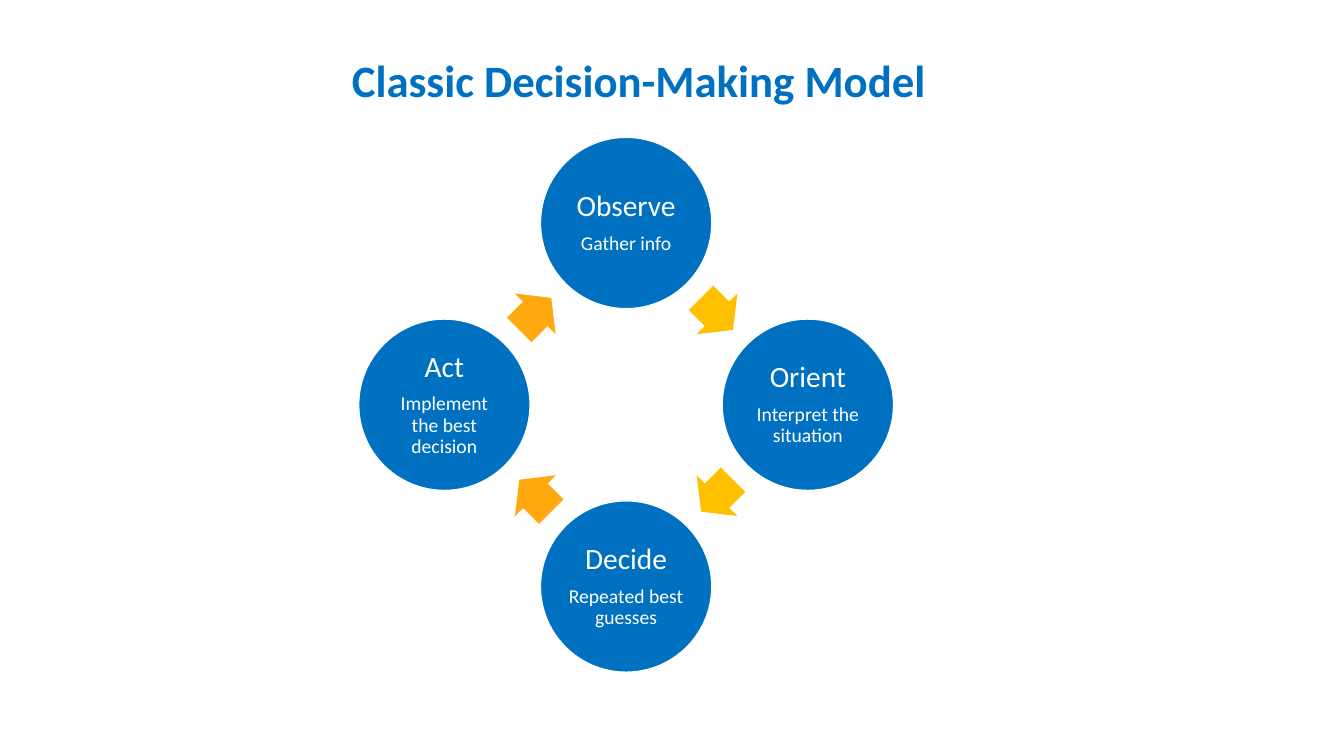
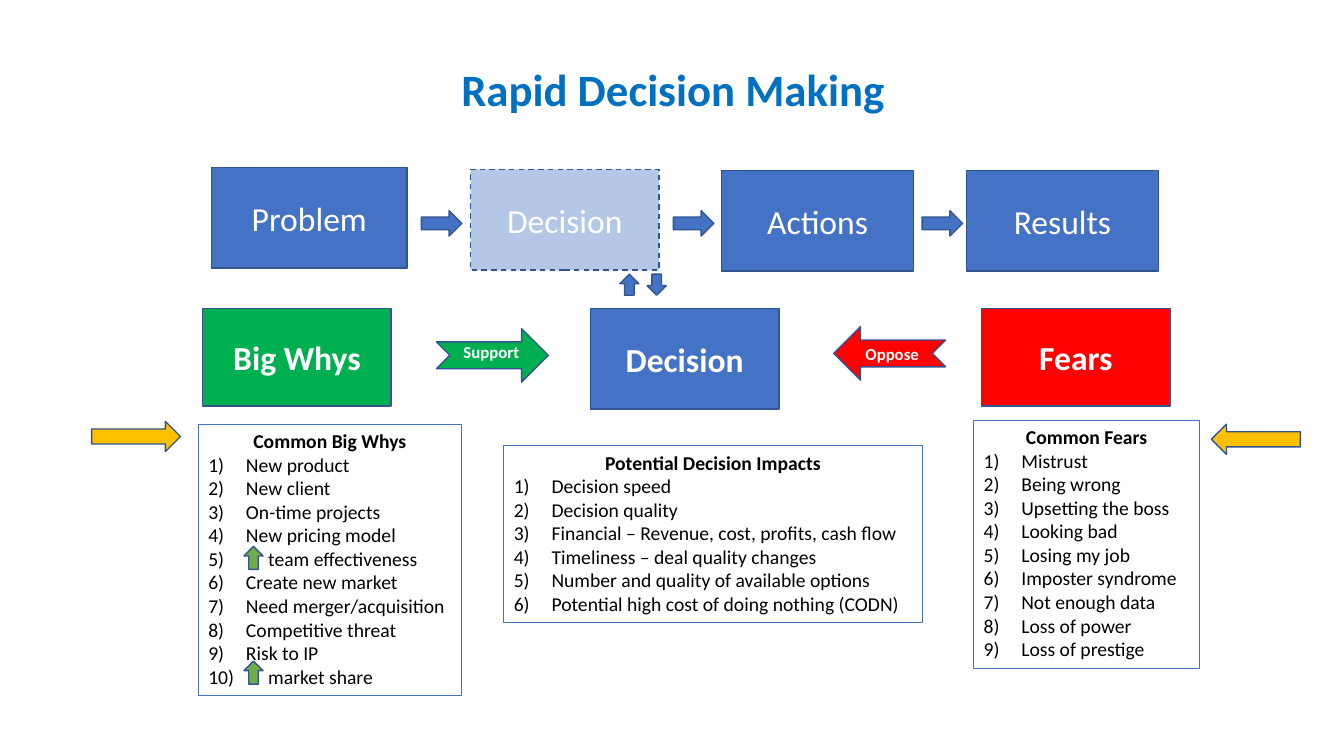
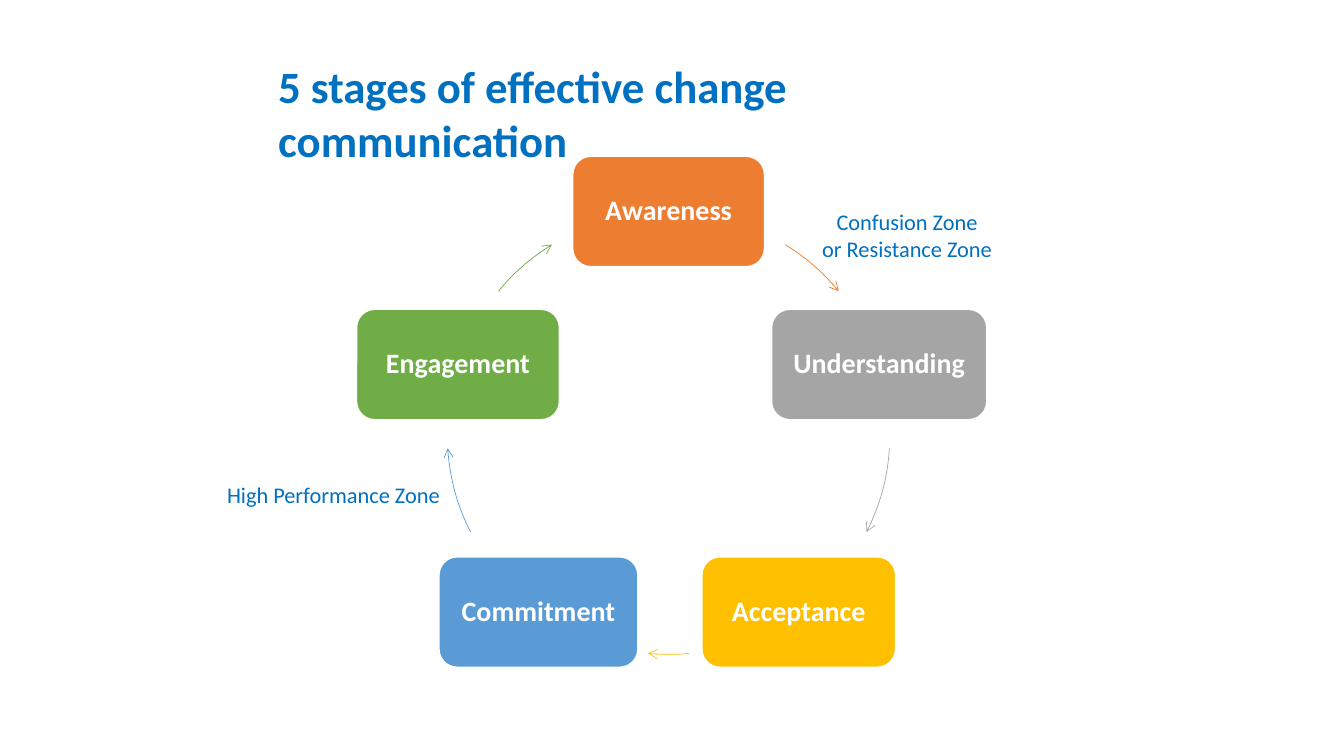
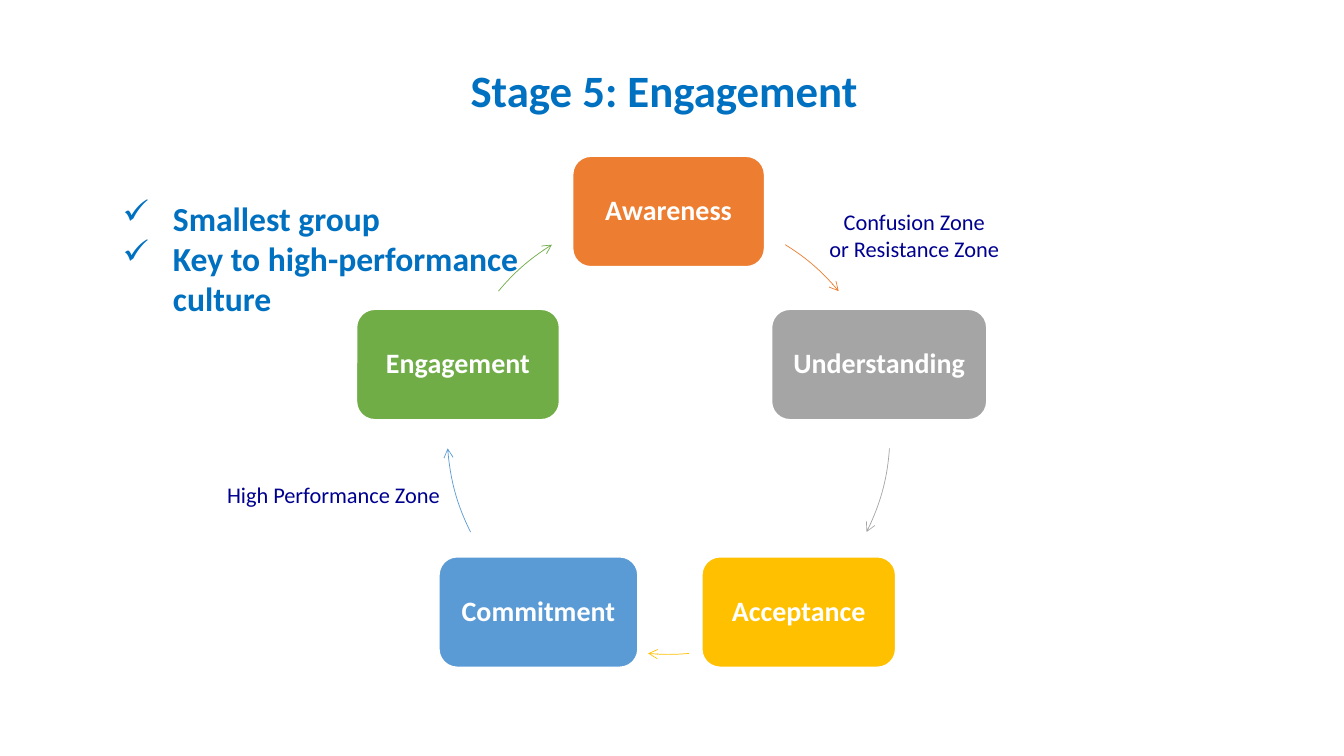
import math

import lxml.etree
import pptx
import pptx.dml.color
import pptx.enum.dml
import pptx.enum.shapes
import pptx.enum.text
import pptx.oxml.ns
import pptx.util

Cm = pptx.util.Cm
Pt = pptx.util.Pt
SHAPE = pptx.enum.shapes.MSO_SHAPE
ALIGN = pptx.enum.text.PP_ALIGN
ANCHOR = pptx.enum.text.MSO_ANCHOR

FONT = "Calibri"
WHITE, BLACK = "FFFFFF", "000000"
TITLE_BLUE, BOX_BLUE, PALE_BLUE, OUTLINE_BLUE = "0070C0", "4472C4", "B4C7E7", "325491"
NAVY, GREEN, RED, GOLD, LEAF, AMBER = "000090", "00B050", "FF0000", "FFC000", "70AD47", "FFA810"

STAGES = [  # name, width, colour, start and end angle of the arrow that follows
    ("Awareness", 4.85, "ED7D31", 301.8, 320.2),
    ("Understanding", 5.44, "A5A5A5", 4, 26.6),
    ("Acceptance", 4.9, GOLD, 84.7, 95.3),
    ("Commitment", 5.03, "5B9BD5", 153.4, 176),
    ("Engagement", 5.13, LEAF, 219.8, 238.2),
]


def rgb(colour):
    return pptx.dml.color.RGBColor.from_string(colour)


def add_element(parent, tag, **attributes):
    return lxml.etree.SubElement(parent, pptx.oxml.ns.qn(tag), **attributes)


def set_bullet(paragraph, tag, indent, hanging, colour=None, **attributes):
    properties = paragraph._p.get_or_add_pPr()
    properties.set("marL", str(Cm(indent)))
    properties.set("indent", str(-Cm(hanging)))
    if colour:
        add_element(add_element(properties, "a:buClr"), "a:srgbClr", val=colour)
    add_element(properties, tag, **attributes)


def format_paragraph(paragraph, size, colour, bold=False, align=ALIGN.LEFT, spacing=None):
    paragraph.alignment = align
    if spacing:
        paragraph.line_spacing = spacing
    for run in paragraph.runs:
        run.font.name = FONT
        run.font.size = Pt(size)
        run.font.bold = bold
        run.font.color.rgb = rgb(colour)


class Deck:
    def __init__(self):
        self.presentation = pptx.Presentation()
        self.presentation.slide_width = Cm(33.87)
        self.presentation.slide_height = Cm(19.05)
        self.slide = None

    def new_slide(self):
        self.slide = self.presentation.slides.add_slide(self.presentation.slide_layouts[6])

    def text(self, text, left, top, width, height, size=32, colour=TITLE_BLUE, bold=False,
             align=ALIGN.CENTER, anchor=ANCHOR.TOP, spacing=None):
        box = self.slide.shapes.add_textbox(Cm(left), Cm(top), Cm(width), Cm(height))
        frame = box.text_frame
        frame.word_wrap = True
        frame.vertical_anchor = anchor
        frame.text = text
        for paragraph in frame.paragraphs:
            format_paragraph(paragraph, size, colour, bold, align, spacing)
        return frame

    def title(self, text, left, top, width, height, align=ALIGN.CENTER):
        self.text(text, left, top, width, height, bold=True, align=align,
                  anchor=ANCHOR.MIDDLE, spacing=0.9)

    def shape(self, kind, left, top, width, height, fill=None, line=OUTLINE_BLUE, weight=1, rotation=0):
        shape = self.slide.shapes.add_shape(kind, Cm(left), Cm(top), Cm(width), Cm(height))
        shape.shadow.inherit = False
        shape.rotation = rotation
        if fill:
            shape.fill.solid()
            shape.fill.fore_color.rgb = rgb(fill)
        else:
            shape.fill.background()
        if line:
            shape.line.color.rgb = rgb(line)
            shape.line.width = Pt(weight)
        else:
            shape.line.fill.background()
        return shape

    def labelled(self, shape, text, sizes, bold=False, margin=0.08, spacing=0.9):
        """Centre text in a shape, with one size for each paragraph."""
        frame = shape.text_frame
        frame.word_wrap = True
        frame.vertical_anchor = ANCHOR.MIDDLE
        frame.margin_left = frame.margin_right = Cm(margin)
        frame.margin_top = frame.margin_bottom = Cm(margin)
        frame.text = text
        for paragraph, size in zip(frame.paragraphs, sizes):
            format_paragraph(paragraph, size, WHITE, bold, ALIGN.CENTER, spacing)
        if len(sizes) > 1:
            frame.paragraphs[0].space_after = Pt(0.35 * sizes[0])

    def box(self, text, left, top, width, height, fill=BOX_BLUE, bold=False):
        shape = self.shape(SHAPE.RECTANGLE, left, top, width, height, fill)
        self.labelled(shape, text, [24], bold, spacing=1)
        return shape

    def numbered_list(self, heading, items, left, top, width, height, icon_rows=()):
        """Framed list; rows in icon_rows leave room for an icon before the text."""
        shape = self.shape(SHAPE.RECTANGLE, left, top, width, height, line=BOX_BLUE, weight=0.75)
        frame = shape.text_frame
        frame.word_wrap = True
        frame.vertical_anchor = ANCHOR.TOP
        frame.text = "\n".join([heading] + items)
        for row, paragraph in enumerate(frame.paragraphs):
            if row:
                indent = 1.51 if row in icon_rows else 0.95
                set_bullet(paragraph, "a:buAutoNum", indent, indent, type="arabicParenR")
            format_paragraph(paragraph, 14, BLACK, row == 0, ALIGN.LEFT if row else ALIGN.CENTER)

    def arc_arrow(self, centre_x, centre_y, radius, start, end, colour):
        arc = self.shape(SHAPE.ARC, centre_x - radius, centre_y - radius,
                         2 * radius, 2 * radius, line=colour, weight=0.5)
        arc.adjustments[0] = start * 0.6
        arc.adjustments[1] = end * 0.6
        add_element(arc.line._get_or_add_ln(), "a:tailEnd", type="arrow")

    def stage_cycle(self, zone_colour, confusion_left):
        centre_x, centre_y, radius, height = 16.85, 10.91, 5.58, 2.8
        for index, (name, width, colour, start, end) in enumerate(STAGES):
            angle = math.radians(360 / len(STAGES) * index - 90)
            x = centre_x + radius * math.cos(angle)
            y = centre_y + radius * math.sin(angle)
            shape = self.shape(SHAPE.ROUNDED_RECTANGLE, x - width / 2, y - height / 2,
                               width, height, colour, WHITE, 1.5)
            self.labelled(shape, name, [20], bold=True, margin=0.2)
            self.arc_arrow(centre_x, centre_y, radius, start, end, colour)
        self.text("Confusion Zone\nor Resistance Zone", confusion_left, 5.12, 6, 1.6, 16,
                  zone_colour, anchor=ANCHOR.MIDDLE)
        self.text("High Performance Zone", 5.23, 11.99, 6.35, 0.94, 16, zone_colour)


def classic_model(deck):
    deck.new_slide()
    deck.title("Classic Decision-Making Model", 1.5, 0.74, 29.21, 2.72)
    centre_x, centre_y, orbit, diameter = 15.78, 10.2, 4.58, 4.32
    arrow_width, arrow_height = 1.14, 1.45
    steps = [
        ("Observe\nGather info", GOLD),
        ("Orient\nInterpret the situation", GOLD),
        ("Decide\nRepeated best guesses", AMBER),
        ("Act\nImplement the best decision", AMBER),
    ]
    for index, (text, arrow_colour) in enumerate(steps):
        angle = math.radians(90 * index - 90)
        x = centre_x + orbit * math.cos(angle)
        y = centre_y + orbit * math.sin(angle)
        circle = deck.shape(SHAPE.OVAL, x - diameter / 2, y - diameter / 2,
                            diameter, diameter, TITLE_BLUE, WHITE)
        deck.labelled(circle, text, [21, 14])
        middle = angle + math.pi / 4
        x = centre_x + orbit * math.sqrt(0.5) * math.cos(middle)
        y = centre_y + orbit * math.sqrt(0.5) * math.sin(middle)
        arrow = deck.shape(SHAPE.RIGHT_ARROW, x - arrow_width / 2, y - arrow_height / 2,
                           arrow_width, arrow_height, arrow_colour, None,
                           rotation=(45 + 90 * index) % 360)
        arrow.adjustments[0] = 0.6


def rapid_decisions(deck):
    deck.new_slide()
    deck.title("Rapid Decision Making", 2.31, 0.94, 29.31, 2.74)

    deck.box("Problem", 5.33, 4.22, 4.93, 2.54)
    open_decision = deck.box("Decision", 11.86, 4.27, 4.75, 2.54, PALE_BLUE)
    open_decision.line.dash_style = pptx.enum.dml.MSO_LINE.DASH
    deck.box("Actions", 18.19, 4.29, 4.83, 2.54)
    deck.box("Results", 24.36, 4.29, 4.83, 2.54)
    for left in (10.62, 16.97, 23.24):
        deck.shape(SHAPE.RIGHT_ARROW, left, 5.31, 1.02, 0.64, BOX_BLUE)
    deck.shape(SHAPE.UP_ARROW, 15.62, 6.91, 0.48, 0.53, BOX_BLUE)
    deck.shape(SHAPE.DOWN_ARROW, 16.31, 6.91, 0.48, 0.53, BOX_BLUE)

    deck.box("Big Whys", 5.11, 7.77, 4.75, 2.46, GREEN, bold=True)
    deck.box("Decision", 14.88, 7.77, 4.75, 2.54, bold=True)
    deck.box("Fears", 24.74, 7.77, 4.75, 2.46, RED, bold=True)
    deck.shape(SHAPE.NOTCHED_RIGHT_ARROW, 11, 8.28, 2.82, 1.35, GREEN)
    deck.shape(SHAPE.NOTCHED_RIGHT_ARROW, 21.01, 8.23, 2.82, 1.35, RED, rotation=180)
    deck.text("Support", 11.43, 8.48, 2.46, 0.76, 12, WHITE, True, ALIGN.LEFT)
    deck.text("Oppose", 21.56, 8.53, 2.39, 0.76, 12, WHITE, True, ALIGN.LEFT)

    deck.numbered_list("Potential Decision Impacts", [
        "Decision speed",
        "Decision quality",
        "Financial – Revenue, cost, profits, cash flow",
        "Timeliness – deal quality changes",
        "Number and quality of available options",
        "Potential high cost of doing nothing (CODN)",
    ], 12.7, 11.23, 10.54, 4.45)
    deck.numbered_list("Common Fears", [
        "Mistrust", "Being wrong", "Upsetting the boss", "Looking bad", "Losing my job",
        "Imposter syndrome", "Not enough data", "Loss of power", "Loss of prestige",
    ], 24.54, 10.59, 5.69, 6.25)
    deck.numbered_list("Common Big Whys", [
        "New product", "New client", "On-time projects", "New pricing model",
        "team effectiveness", "Create new market", "Need merger/acquisition",
        "Competitive threat", "Risk to IP", "market share",
    ], 5, 10.69, 6.63, 6.83, icon_rows=(5, 10))
    for top in (13.77, 16.66):
        deck.shape(SHAPE.UP_ARROW, 6.15, top, 0.48, 0.58, LEAF)
    deck.shape(SHAPE.RIGHT_ARROW, 2.31, 10.62, 2.24, 0.76, GOLD)
    deck.shape(SHAPE.LEFT_ARROW, 30.53, 10.69, 2.24, 0.76, GOLD)


def change_stages(deck):
    deck.new_slide()
    deck.stage_cycle(TITLE_BLUE, 19.86)
    deck.text("5 stages of effective change communication", 6.76, 1.35, 20.37, 1.63,
              bold=True, align=ALIGN.LEFT)


def engagement_stage(deck):
    deck.new_slide()
    deck.title("Stage 5: Engagement", 11.61, 0.76, 10.64, 3.18, ALIGN.LEFT)
    deck.stage_cycle(NAVY, 20.04)
    frame = deck.text("Smallest group\nKey to high-performance culture", 2.84, 4.85, 10.62, 3.33,
                      24, bold=True, align=ALIGN.LEFT)
    for paragraph in frame.paragraphs:
        set_bullet(paragraph, "a:buChar", 1.27, 1.27, TITLE_BLUE, char="✓")


def main():
    deck = Deck()
    classic_model(deck)
    rapid_decisions(deck)
    change_stages(deck)
    engagement_stage(deck)
    deck.presentation.save("out.pptx")


if __name__ == "__main__":
    main()
